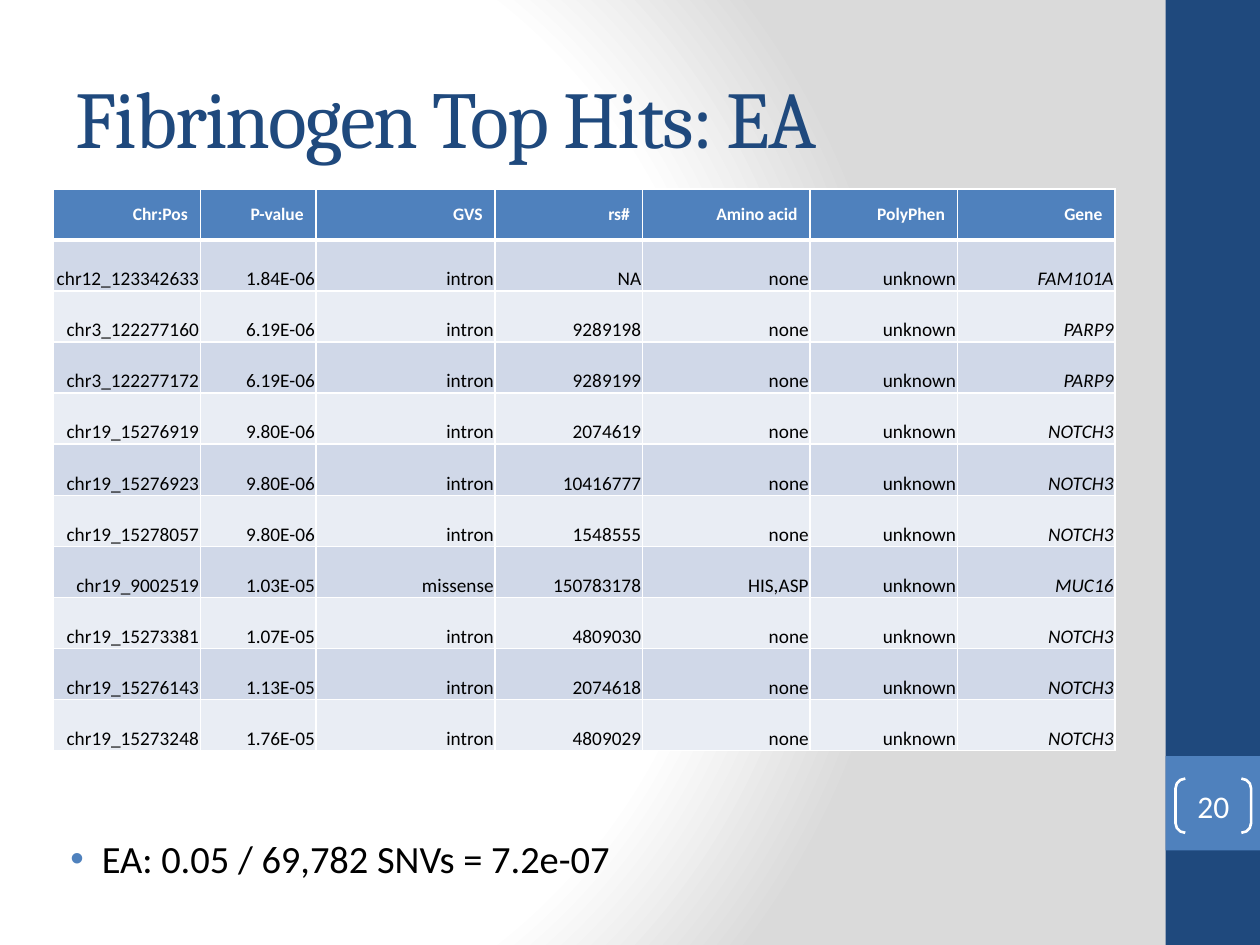
import dataclasses

import pptx
import pptx.dml.color
import pptx.enum.shapes
import pptx.enum.text
import pptx.oxml
import pptx.oxml.ns
import pptx.util

Inches = pptx.util.Inches
Pt = pptx.util.Pt
Align = pptx.enum.text.PP_ALIGN
Anchor = pptx.enum.text.MSO_ANCHOR
Kind = pptx.enum.shapes.MSO_SHAPE
NS = pptx.oxml.ns.nsdecls("a")


@dataclasses.dataclass(frozen=True)
class Theme:
    navy: str = "1F497D"
    blue: str = "4F81BD"
    white: str = "FFFFFF"
    black: str = "000000"
    gray: str = "DADADA"
    bands: tuple = ("D0D8E8", "E9EDF4")
    serif: str = "Cambria"
    sans: str = "Calibri"
    title: int = 46
    note: int = 22
    page: int = 18
    head: int = 10
    body: int = 11


THEME = Theme()
WIDTHS = (1.17, 0.92, 1.42, 1.17, 1.33, 1.17, 1.25)
HEADS = ("Chr:Pos", "P-value", "GVS", "rs#", "Amino acid", "PolyPhen", "Gene")
HITS = (
    ("chr12_123342633", "1.84E-06", "intron", "NA", "none", "unknown", "FAM101A"),
    ("chr3_122277160", "6.19E-06", "intron", "9289198", "none", "unknown", "PARP9"),
    ("chr3_122277172", "6.19E-06", "intron", "9289199", "none", "unknown", "PARP9"),
    ("chr19_15276919", "9.80E-06", "intron", "2074619", "none", "unknown", "NOTCH3"),
    ("chr19_15276923", "9.80E-06", "intron", "10416777", "none", "unknown", "NOTCH3"),
    ("chr19_15278057", "9.80E-06", "intron", "1548555", "none", "unknown", "NOTCH3"),
    ("chr19_9002519", "1.03E-05", "missense", "150783178", "HIS,ASP", "unknown", "MUC16"),
    ("chr19_15273381", "1.07E-05", "intron", "4809030", "none", "unknown", "NOTCH3"),
    ("chr19_15276143", "1.13E-05", "intron", "2074618", "none", "unknown", "NOTCH3"),
    ("chr19_15273248", "1.76E-05", "intron", "4809029", "none", "unknown", "NOTCH3"),
)


def color(code):
    return pptx.dml.color.RGBColor.from_string(code)


def write(frame, text, size, tint, face=THEME.sans, align=Align.LEFT):
    """Put one styled paragraph in a text frame and return it."""
    frame.text = text
    para = frame.paragraphs[0]
    para.alignment = align
    font = para.runs[0].font
    font.size, font.name = Pt(size), face
    font.color.rgb = color(tint)
    return para


def inset(item, left, top, right, bottom):
    item.margin_left, item.margin_top = Inches(left), Inches(top)
    item.margin_right, item.margin_bottom = Inches(right), Inches(bottom)


def paint(slide):
    """Fill the background with a radial gradient."""
    fill = slide.background.fill
    fill.solid()
    old = slide.element.find(".//" + pptx.oxml.ns.qn("a:solidFill"))
    stops = ((0, THEME.white), (75, THEME.white), (100, THEME.gray))
    marks = "".join(
        f'<a:gs pos="{pos * 1000}"><a:srgbClr val="{code}"/></a:gs>'
        for pos, code in stops)
    new = pptx.oxml.parse_xml(
        f'<a:gradFill {NS} rotWithShape="1"><a:gsLst>{marks}</a:gsLst>'
        '<a:path path="circle"><a:fillToRect l="20000" t="50000" '
        'r="100000" b="50000"/></a:path></a:gradFill>')
    old.getparent().replace(old, new)


def block(slide, top, high, tint):
    """Draw a filled block in the right-hand band."""
    shape = slide.shapes.add_shape(
        Kind.RECTANGLE, Inches(9.25), Inches(top), Inches(0.75), Inches(high))
    shape.shadow.inherit = False
    shape.fill.solid()
    shape.fill.fore_color.rgb = color(tint)
    shape.line.fill.background()


def badge(slide, text):
    """Draw the page number between brackets."""
    shape = slide.shapes.add_shape(
        Kind.DOUBLE_BRACKET, Inches(9.33), Inches(6.18), Inches(0.6), Inches(0.43))
    shape.adjustments[0] = 0.18
    shape.shadow.inherit = False
    shape.fill.background()
    shape.line.color.rgb = color(THEME.white)
    shape.line.width = Pt(1.5)
    frame = shape.text_frame
    inset(frame, 0, 0, 0, 0)
    frame.vertical_anchor = Anchor.MIDDLE
    write(frame, text, THEME.page, THEME.white, align=Align.CENTER)


def label(slide, left, top, high, anchor):
    """Add a wrapping text box and return its frame."""
    box = slide.shapes.add_textbox(
        Inches(left), Inches(top), Inches(8.33), Inches(high))
    frame = box.text_frame
    frame.word_wrap = True
    frame.vertical_anchor = anchor
    return frame


def title(slide, text):
    frame = label(slide, 0.5, 0.3, 1.25, Anchor.MIDDLE)
    para = write(frame, text, THEME.title, THEME.navy, THEME.serif)
    para.runs[0].font._element.set("spc", "-100")


def bullet(slide, text):
    frame = label(slide, 0.33, 6.58, 0.58, Anchor.TOP)
    para = write(frame, text, THEME.note, THEME.black)
    para.space_before = Pt(THEME.note * 0.2)
    props = para._p.get_or_add_pPr()
    props.set("marL", str(Inches(0.38)))
    props.set("indent", str(Inches(-0.25)))
    for part in (f'<a:buClr {NS}><a:srgbClr val="{THEME.blue}"/></a:buClr>',
                 f'<a:buFont {NS} typeface="Arial"/>',
                 f'<a:buChar {NS} char="•"/>'):
        props.append(pptx.oxml.parse_xml(part))


def edge(cell, top, bottom):
    """Give a cell white borders, with top and bottom widths in points."""
    props = cell._tc.get_or_add_tcPr()
    sides = (("L", 1), ("R", 1), ("T", top), ("B", bottom))
    for spot, (side, width) in enumerate(sides):
        props.insert(spot, pptx.oxml.parse_xml(
            f'<a:ln{side} {NS} w="{Pt(width)}"><a:solidFill>'
            f'<a:srgbClr val="{THEME.white}"/></a:solidFill></a:ln{side}>'))


def grid(slide):
    """Build the table of top hits."""
    rows = (HEADS,) + HITS
    table = slide.shapes.add_table(
        len(rows), len(HEADS), Inches(0.42), Inches(1.5),
        Inches(sum(WIDTHS)), Inches(4.46)).table
    for col, width in zip(table.columns, WIDTHS):
        col.width = Inches(width)
    for r, row in enumerate(rows):
        head = r == 0
        for c, text in enumerate(row):
            cell = table.cell(r, c)
            cell.fill.solid()
            cell.fill.fore_color.rgb = color(
                THEME.blue if head else THEME.bands[(r - 1) % 2])
            cell.vertical_anchor = Anchor.MIDDLE if head else Anchor.BOTTOM
            if not head:
                inset(cell, 0.01, 0.01, 0.01, 0)
            para = write(cell.text_frame, text,
                         THEME.head if head else THEME.body,
                         THEME.white if head else THEME.black,
                         align=Align.RIGHT)
            font = para.runs[0].font
            font.bold = head
            font.italic = not head and c == len(HEADS) - 1
            edge(cell, 3 if r == 1 else 1, 3 if head else 1)


def main():
    deck = pptx.Presentation()
    deck.slide_width, deck.slide_height = Inches(10), Inches(7.5)
    slide = deck.slides.add_slide(deck.slide_layouts[6])

    # Background and side band
    paint(slide)
    block(slide, 0, 7.5, THEME.navy)
    block(slide, 6, 0.75, THEME.blue)

    # Content
    title(slide, "Fibrinogen Top Hits: EA")
    badge(slide, "20")
    bullet(slide, "EA: 0.05 / 69,782 SNVs = 7.2e-07")
    grid(slide)

    deck.save("out.pptx")


if __name__ == "__main__":
    main()
